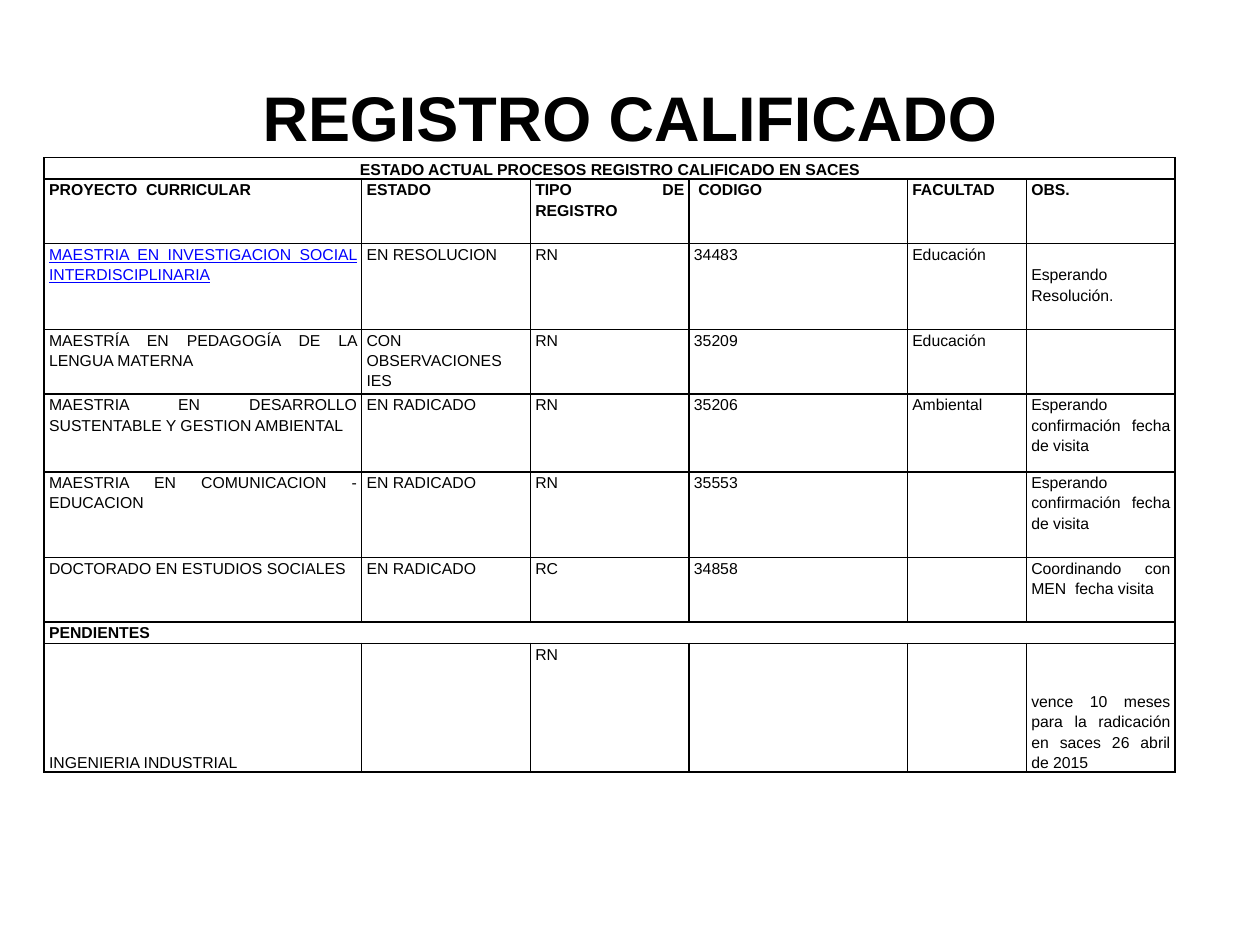
from lxml.etree import SubElement
from pptx import Presentation
from pptx.dml.color import RGBColor
from pptx.enum.text import MSO_ANCHOR as Anchor, PP_ALIGN as Align
from pptx.oxml import parse_xml
from pptx.oxml.ns import nsdecls, qn
from pptx.util import Cm, Pt

COLORS = {"text": "000000", "link": "0000FF", "header": "FFFFFF", "border": "000000"}
COLUMNS = [6.4, 3.4, 3.2, 4.4, 2.4, 3]
HEIGHTS = [0.43, 1.3, 1.73, 1.3, 1.57, 1.73, 1.3, 0.43, 2.59]
BANNER, HEADER, FIRST, PENDING, LAST = 0, 1, 2, 7, 8
VISIT = "Esperando confirmación fecha de visita"
ROWS = [
    ["ESTADO ACTUAL PROCESOS REGISTRO CALIFICADO EN SACES"],
    ["PROYECTO  CURRICULAR", "ESTADO", "TIPO DE REGISTRO", " CODIGO", "FACULTAD", "OBS."],
    ["MAESTRIA EN INVESTIGACION SOCIAL INTERDISCIPLINARIA", "EN RESOLUCION", "RN",
     "34483", "Educación", "Esperando Resolución."],
    ["MAESTRÍA EN PEDAGOGÍA DE LA LENGUA MATERNA", "CON OBSERVACIONES IES", "RN",
     "35209", "Educación", ""],
    ["MAESTRIA EN DESARROLLO SUSTENTABLE Y GESTION AMBIENTAL", "EN RADICADO", "RN",
     "35206", "Ambiental", VISIT],
    ["MAESTRIA EN COMUNICACION - EDUCACION", "EN RADICADO", "RN", "35553", "", VISIT],
    ["DOCTORADO EN ESTUDIOS SOCIALES", "EN RADICADO", "RC", "34858", "",
     "Coordinando con MEN  fecha visita"],
    ["PENDIENTES"],
    ["INGENIERIA INDUSTRIAL", "", "RN", "", "",
     "vence 10 meses para la radicación en saces 26 abril de 2015"],
]


class Deck:
    font = "Arial"
    table_size = 9

    def __init__(self, width, height):
        self.prs = Presentation()
        self.prs.slide_width, self.prs.slide_height = Cm(width), Cm(height)
        self.s = self.prs.slides.add_slide(self.prs.slide_layouts[5])

    def run(self, p, text, size, bold=False, color="text", underline=False):
        r = p.add_run()
        r.text = text
        r.font.name, r.font.size = self.font, Pt(size)
        r.font.bold, r.font.underline = bold, underline
        r.font.color.rgb = RGBColor.from_string(COLORS[color])

    def title(self, text, left, top, width, height):
        sp = self.s.shapes.title
        sp.left, sp.top, sp.width, sp.height = Cm(left), Cm(top), Cm(width), Cm(height)
        tf = sp.text_frame
        tf.margin_left = tf.margin_right = tf.margin_top = tf.margin_bottom = 0
        tf.vertical_anchor = Anchor.MIDDLE
        tf.word_wrap = True
        p = tf.paragraphs[0]
        p.alignment = Align.CENTER
        self.run(p, text, 36, bold=True)

    def table(self, left, top, columns, heights):
        tbl = self.s.shapes.add_table(len(heights), len(columns), Cm(left), Cm(top),
                                      Cm(sum(columns)), Cm(sum(heights))).table
        tbl.first_row = tbl.horz_banding = False
        for col, width in zip(tbl.columns, columns):
            col.width = Cm(width)
        for row, height in zip(tbl.rows, heights):
            row.height = Cm(height)
        return tbl

    def cell(self, cell, text, align=Align.JUSTIFY, anchor=Anchor.TOP, fill=None,
             margin_top=0, **style):
        cell.margin_left = cell.margin_right = Cm(0.1)
        cell.margin_top, cell.margin_bottom = Cm(margin_top), 0
        cell.vertical_anchor = anchor
        if fill:
            cell.fill.solid()
            cell.fill.fore_color.rgb = RGBColor.from_string(COLORS[fill])
        else:
            cell.fill.background()
        self.borders(cell)
        p = cell.text_frame.paragraphs[0]
        p.alignment, p.line_spacing = align, 1.15
        if text:
            self.run(p, text, self.table_size, **style)
        else:
            SubElement(p._p, qn("a:endParaRPr"), sz=str(self.table_size * 100))

    def borders(self, cell):
        tcPr = cell._tc.get_or_add_tcPr()
        for i, side in enumerate(("lnL", "lnR", "lnT", "lnB")):
            tcPr.insert(i, parse_xml(
                f'<a:{side} {nsdecls("a")} w="{Pt(1)}"><a:solidFill>'
                f'<a:srgbClr val="{COLORS["border"]}"/></a:solidFill></a:{side}>'))


def main():
    deck = Deck(25.4, 19.05)
    deck.title("REGISTRO CALIFICADO", 1.27, 0.76, 22.86, 3.18)
    tbl = deck.table(0.89, 3.18, COLUMNS, HEIGHTS)
    last_col = len(COLUMNS) - 1
    special = {
        (BANNER, 0): {"align": Align.CENTER, "anchor": Anchor.BOTTOM},
        (FIRST, 0): {"color": "link", "underline": True},
        (FIRST, last_col): {"margin_top": 0.41},
        (LAST, 0): {"anchor": Anchor.BOTTOM},
        (LAST, last_col): {"anchor": Anchor.BOTTOM},
    }
    for i, texts in enumerate(ROWS):
        for j in range(len(COLUMNS)):
            deck.cell(tbl.cell(i, j), texts[j] if j < len(texts) else "",
                      bold=i in (BANNER, HEADER, PENDING),
                      fill="header" if i == HEADER else None, **special.get((i, j), {}))
        if len(texts) == 1:
            tbl.cell(i, 0).merge(tbl.cell(i, last_col))
    deck.prs.save("out.pptx")


if __name__ == "__main__":
    main()
